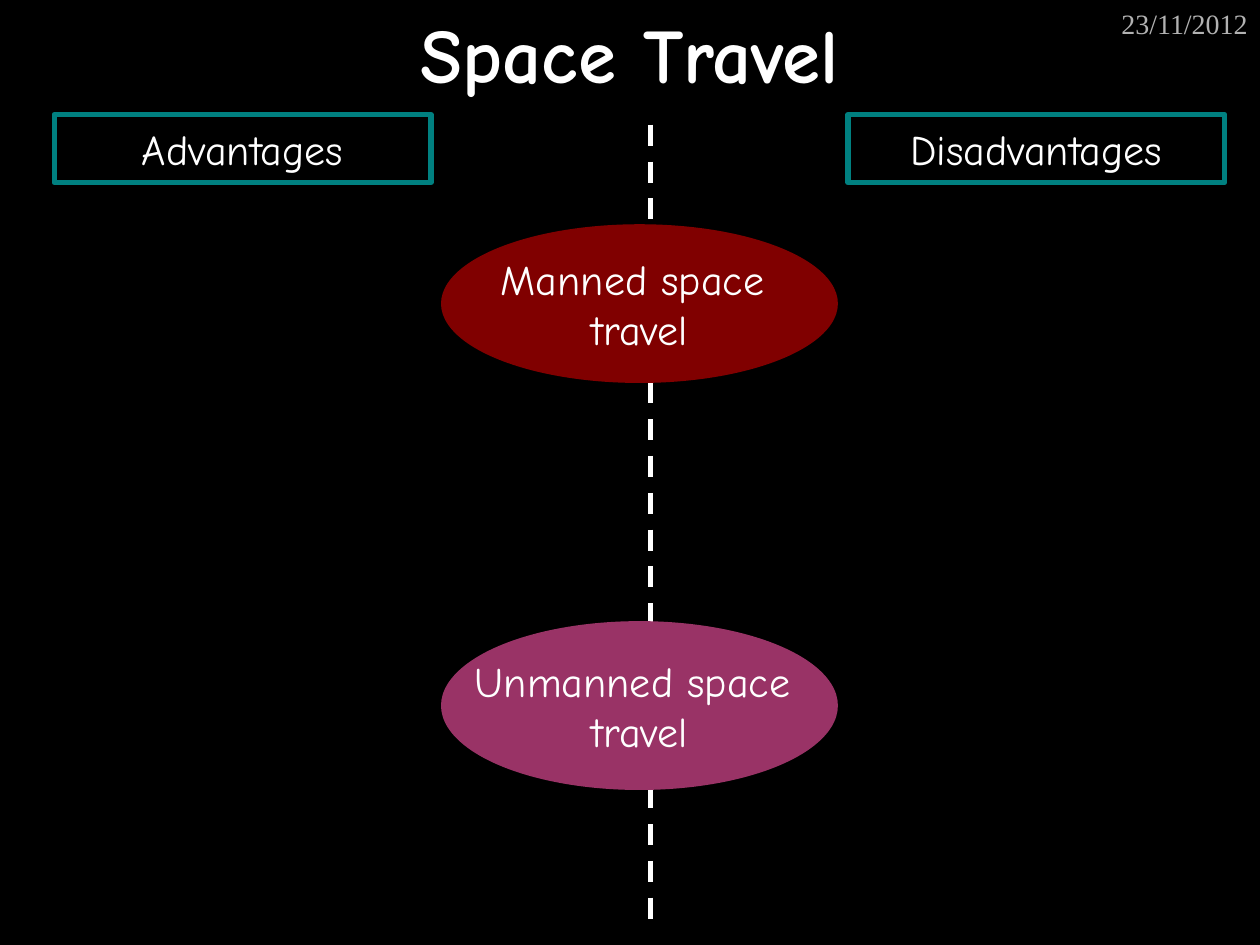
from dataclasses import dataclass

from lxml import etree
from pptx import Presentation
from pptx.dml.color import RGBColor as RGB
from pptx.enum.dml import MSO_LINE
from pptx.enum.shapes import MSO_CONNECTOR, MSO_SHAPE
from pptx.enum.text import MSO_ANCHOR, PP_ALIGN
from pptx.oxml.ns import qn
from pptx.util import Inches, Pt


@dataclass(frozen=True)
class Theme:
    background: RGB = RGB(0x00, 0x00, 0x00)
    text: RGB = RGB(0xFF, 0xFF, 0xFF)
    date: RGB = RGB(0xB2, 0xB2, 0xB2)
    frame: RGB = RGB(0x00, 0x80, 0x80)
    manned: RGB = RGB(0x80, 0x00, 0x00)
    unmanned: RGB = RGB(0x99, 0x33, 0x66)
    font: str = "Comic Neue"
    date_font: str = "Times New Roman"
    title_size: Pt = Pt(44)
    body_size: Pt = Pt(24)
    date_size: Pt = Pt(16)
    line_width: Pt = Pt(3)


theme = Theme()


def write(shape, lines, size=theme.body_size, color=theme.text, font=theme.font,
          bold=False, align=PP_ALIGN.CENTER, anchor=MSO_ANCHOR.MIDDLE, wrap=True):
    tf = shape.text_frame
    tf.word_wrap = wrap
    tf.vertical_anchor = anchor
    for i, line in enumerate(lines):
        p = tf.add_paragraph() if i else tf.paragraphs[0]
        p.alignment = align
        r = p.add_run()
        r.text = line
        r.font.name = font
        r.font.size = size
        r.font.bold = bold
        r.font.color.rgb = color


prs = Presentation()
prs.slide_width, prs.slide_height = Inches(10), Inches(7.5)
s = prs.slides.add_slide(prs.slide_layouts[6])
s.background.fill.solid()
s.background.fill.fore_color.rgb = theme.background

# Date
date = s.shapes.add_textbox(Inches(7.92), Inches(0), Inches(2.08), Inches(0.5))
write(date, ["23/11/2012"], theme.date_size, theme.date, theme.date_font,
      align=PP_ALIGN.RIGHT, anchor=MSO_ANCHOR.TOP)

# Dashed divider
divider = s.shapes.add_connector(MSO_CONNECTOR.STRAIGHT, Inches(5.16), Inches(0.99),
                                 Inches(5.16), Inches(7.29))
divider.line.color.rgb = theme.text
divider.line.width = theme.line_width
divider.line.dash_style = MSO_LINE.DASH
etree.SubElement(divider._element.spPr, qn("a:effectLst"))

# Title
title = s.shapes.add_textbox(Inches(0), Inches(0), Inches(10), Inches(0.84))
write(title, ["Space Travel"], theme.title_size, bold=True)

# Kinds of space travel
for lines, top, height, color in [
    (["Manned space ", "travel"], 1.78, 1.26, theme.manned),
    (["Unmanned space ", "travel"], 4.93, 1.34, theme.unmanned),
]:
    oval = s.shapes.add_shape(MSO_SHAPE.OVAL, Inches(3.5), Inches(top),
                              Inches(3.15), Inches(height))
    oval.shadow.inherit = False
    oval.fill.solid()
    oval.fill.fore_color.rgb = color
    oval.line.fill.background()
    write(oval, lines, wrap=False)

# Column headings
for heading, left in [("Advantages", 0.43), ("Disadvantages", 6.73)]:
    box = s.shapes.add_shape(MSO_SHAPE.RECTANGLE, Inches(left), Inches(0.91),
                             Inches(2.99), Inches(0.54))
    box.shadow.inherit = False
    box.fill.background()
    box.line.color.rgb = theme.frame
    box.line.width = theme.line_width
    write(box, [heading])

prs.save("out.pptx")
